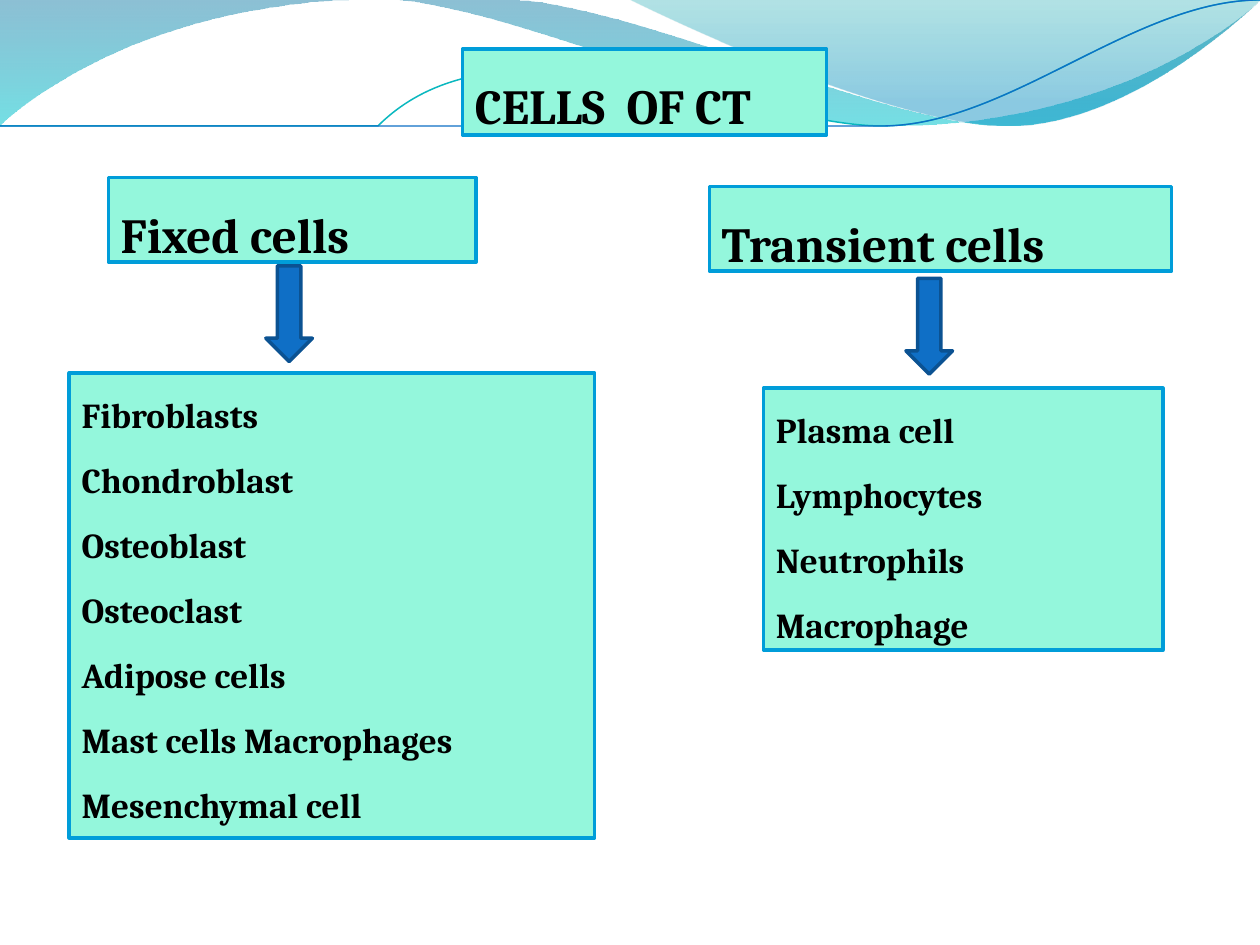
from dataclasses import dataclass

from lxml import etree
from pptx import Presentation
from pptx.dml.color import RGBColor
from pptx.enum.shapes import MSO_SHAPE
from pptx.enum.text import MSO_ANCHOR, MSO_AUTO_SIZE, PP_ALIGN
from pptx.oxml.ns import qn
from pptx.util import Inches, Pt

RECT, DOWN_ARROW = MSO_SHAPE.RECTANGLE, MSO_SHAPE.DOWN_ARROW
TOP, FIT = MSO_ANCHOR.TOP, MSO_AUTO_SIZE.SHAPE_TO_FIT_TEXT
LEFT, JUSTIFY = PP_ALIGN.LEFT, PP_ALIGN.JUSTIFY


@dataclass(frozen=True)
class Theme:
    font: str = "Cambria"
    text: str = "000000"
    box: str = "94F7DC"
    box_line: str = "009DD9"
    arrow: str = "0F6FC6"
    arrow_line: str = "0B5292"
    teal_line: str = "0AB8BF"
    heading: int = 28
    body: int = 20
    border: float = 2
    line_spacing: float = 1.35
    space_before: float = 0.235


THEME = Theme()

WAVES = [
    ((0, 0), [
        (4.4, -0.01),
        (4.76, 0.17, 6.64, 0.63, 7.58, 0.63),
        (8.53, 0.63, 9.58, 0.26, 10, 0.09),
        (10.01, 0.36),
        (9.83, 0.44, 8.7, 0.76, 7.46, 0.75),
        (6.22, 0.75, 3.82, 0.28, 2.57, 0.34),
        (1.29, 0.36, 0.46, 0.83, -0.01, 1.13),
    ], [(0, "0074A1", 45), (1, "00C6CF", 55)]),
    ((4.79, -0.01), [
        (5.09, 0.11, 6.82, 0.62, 7.69, 0.65),
        (8.56, 0.69, 9.61, 0.32, 10, 0.21),
        (10, 0),
    ], [(0, "00A1A9", 30), (0.8, "008BBF", 45)]),
]

STRANDS = [
    ((0, 1.11), [
        (0.48, 0.93, 1.58, 0.57, 2.77, 0.52),
        (3.95, 0.47, 5.93, 0.89, 7.13, 0.8),
        (8.33, 0.71, 9.38, 0.15, 9.98, -0.02),
    ], THEME.teal_line, 0.85),
    ((0, 1.04), [
        (0.47, 0.96, 1.64, 0.61, 2.83, 0.56),
        (4.03, 0.51, 5.97, 0.84, 7.17, 0.75),
        (8.36, 0.67, 9.41, 0.21, 10, 0.06),
    ], THEME.arrow, 0.75),
]

FIXED_CELLS = ["Fibroblasts", "Chondroblast", "Osteoblast", "Osteoclast",
               "Adipose cells", "Mast cells Macrophages", "Mesenchymal cell"]
TRANSIENT_CELLS = ["Plasma cell", "Lymphocytes", "Neutrophils", "Macrophage"]


def rgb(value):
    return RGBColor.from_string(value)


def set_line(sp, color, width):
    sp.line.color.rgb = rgb(color)
    sp.line.width = Pt(width)


def add_curve(s, start, segments, close):
    points = [pair for seg in segments for pair in zip(seg[::2], seg[1::2])]
    builder = s.shapes.build_freeform(*start, scale=Inches(1))
    builder.add_line_segments(points, close=close)
    sp = builder.convert_to_shape()
    sp.shadow.inherit = False
    lines = iter(list(sp.element.iter(qn("a:lnTo"))))
    for seg in segments:
        nodes = [next(lines) for _ in range(len(seg) // 2)]
        if len(nodes) == 3:
            bezier = etree.Element(qn("a:cubicBezTo"))
            nodes[0].addprevious(bezier)
            for node in nodes:
                bezier.append(node[0])
                node.getparent().remove(node)
    return sp


def add_wave(s, start, segments, stops):
    sp = add_curve(s, start, segments, True)
    sp.line.fill.background()
    sp.fill.gradient()
    sp.fill.gradient_angle = 270
    for stop, (position, color, _) in zip(sp.fill.gradient_stops, stops):
        stop.position = position
        stop.color.rgb = rgb(color)
    colors = sp.element.spPr.find(qn("a:gradFill")).iter(qn("a:srgbClr"))
    for node, (_, _, opacity) in zip(colors, stops):
        etree.SubElement(node, qn("a:alpha"), val=str(opacity * 1000))


def add_strand(s, start, segments, color, width):
    sp = add_curve(s, start, segments, False)
    sp.fill.background()
    set_line(sp, color, width)


def add_solid(s, kind, box, fill, line):
    sp = s.shapes.add_shape(kind, *map(Inches, box))
    sp.shadow.inherit = False
    sp.fill.solid()
    sp.fill.fore_color.rgb = rgb(fill)
    set_line(sp, line, THEME.border)
    return sp


def add_box(s, box, lines, size, align=LEFT):
    sp = add_solid(s, RECT, box, THEME.box, THEME.box_line)
    tf = sp.text_frame
    tf.word_wrap = True
    tf.auto_size = FIT
    tf.vertical_anchor = TOP
    for i, line in enumerate(lines):
        p = tf.add_paragraph() if i else tf.paragraphs[0]
        p.alignment = align
        p.line_spacing = THEME.line_spacing
        p.space_before = Pt(size * THEME.space_before)
        r = p.add_run()
        r.text = line
        r.font.name = THEME.font
        r.font.size = Pt(size)
        r.font.bold = True
        r.font.color.rgb = rgb(THEME.text)


def add_arrow(s, left, top):
    add_solid(s, DOWN_ARROW, (left, top, 0.37, 0.76), THEME.arrow, THEME.arrow_line)


def main():
    prs = Presentation()
    prs.slide_width, prs.slide_height = Inches(10), Inches(7.5)
    s = prs.slides.add_slide(prs.slide_layouts[6])
    for wave in WAVES:
        add_wave(s, *wave)
    for strand in STRANDS:
        add_strand(s, *strand)
    add_box(s, (3.67, 0.39, 2.89, 0.68), ["CELLS  OF CT"], THEME.heading)
    add_box(s, (0.86, 1.41, 2.92, 0.67), ["Fixed cells"], THEME.heading, JUSTIFY)
    add_box(s, (5.63, 1.48, 3.67, 0.67), ["Transient cells"], THEME.heading, JUSTIFY)
    add_box(s, (0.55, 2.96, 4.17, 3.69), FIXED_CELLS, THEME.body)
    add_box(s, (6.06, 3.08, 3.17, 2.08), TRANSIENT_CELLS, THEME.body, JUSTIFY)
    add_arrow(s, 2.11, 2.11)
    add_arrow(s, 7.19, 2.21)
    prs.save("out.pptx")


main()
